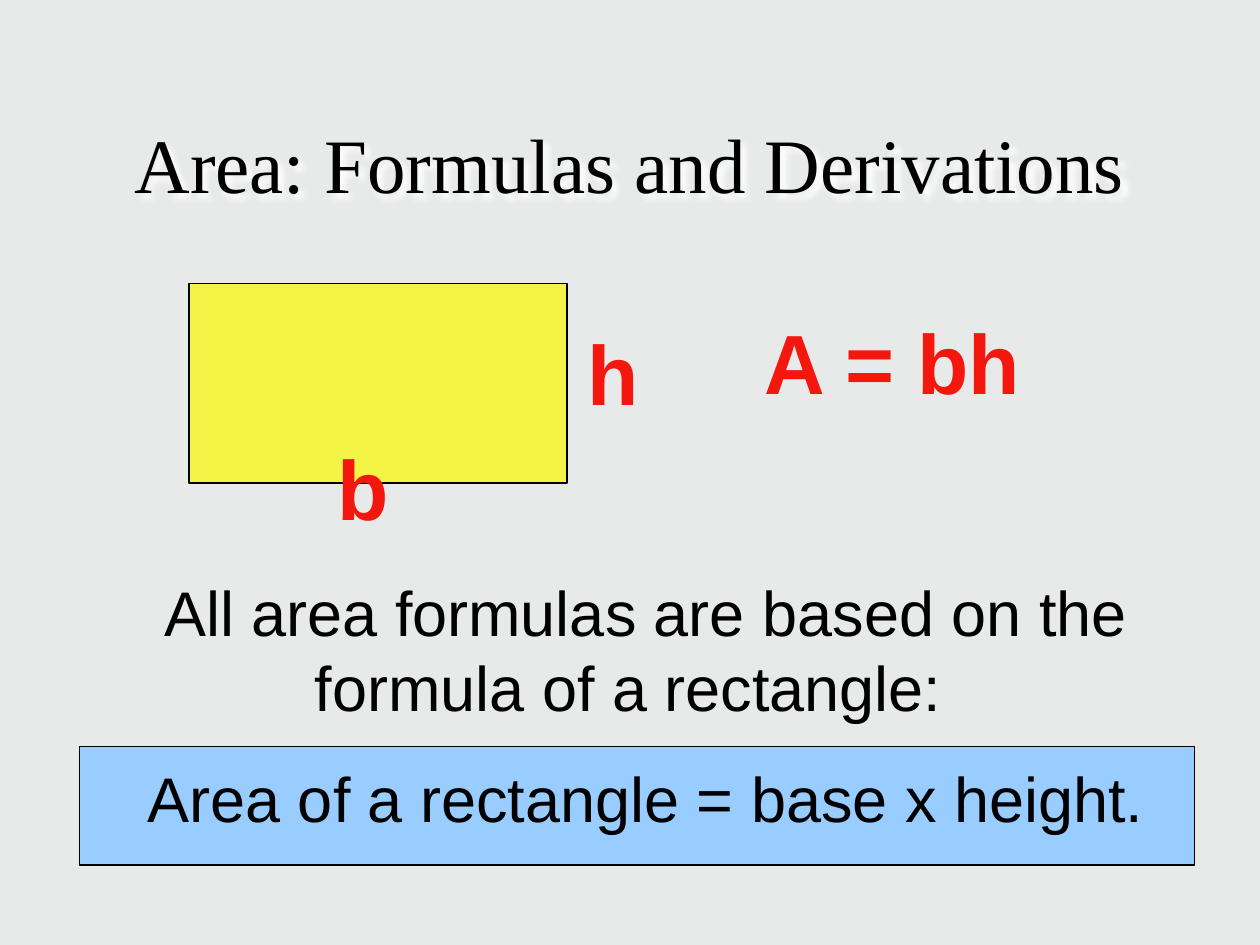
"""Build the slide on the area formula of a rectangle."""
from dataclasses import dataclass

from lxml import etree
from pptx import Presentation
from pptx.dml.color import RGBColor
from pptx.enum.shapes import MSO_SHAPE
from pptx.enum.text import MSO_ANCHOR, PP_ALIGN
from pptx.oxml.ns import qn
from pptx.util import Pt

RECT = MSO_SHAPE.RECTANGLE
TOP, MIDDLE = MSO_ANCHOR.TOP, MSO_ANCHOR.MIDDLE
LEFT, CENTER = PP_ALIGN.LEFT, PP_ALIGN.CENTER
BLANK = 6


@dataclass(frozen=True)
class Theme:
    background: str = "E8EAE9"
    ink: str = "000000"
    accent: str = "F4170E"
    figure: str = "F4F446"
    banner: str = "99CCFF"
    glow: str = "FFFFFF"
    title_font: str = "Times New Roman"
    body_font: str = "Arial"
    title_size: int = 44
    body_size: int = 36
    label_size: int = 48


THEME = Theme()


def rgb(value):
    return RGBColor.from_string(value)


def add_rect(s, box, fill):
    sp = s.shapes.add_shape(RECT, *map(Pt, box))
    sp.shadow.inherit = False
    sp.fill.solid()
    sp.fill.fore_color.rgb = rgb(fill)
    sp.line.color.rgb = rgb(THEME.ink)
    sp.line.width = Pt(0.75)


def add_text(s, box, text, *, size=THEME.body_size, font=THEME.body_font,
             color=THEME.ink, bold=False, align=CENTER, anchor=TOP,
             wrap=True, indent=0, gap=0):
    sp = s.shapes.add_textbox(*map(Pt, box))
    tf = sp.text_frame
    tf.word_wrap = wrap
    tf.vertical_anchor = anchor
    for i, line in enumerate(text.split("\n")):
        p = tf.add_paragraph() if i else tf.paragraphs[0]
        p.alignment = align
        if i:
            p.space_before = Pt(gap)
        if indent:
            p._p.get_or_add_pPr().set("indent", str(Pt(indent)))
        r = p.add_run()
        r.text = line
        r.font.name = font
        r.font.size = Pt(size)
        r.font.bold = bold
        r.font.color.rgb = rgb(color)
    return sp


def add_label(s, box, text, **fmt):
    add_text(s, box, text, size=THEME.label_size, color=THEME.accent,
             bold=True, **fmt)


def add_glow(sp, color):
    effects = etree.SubElement(sp._element.spPr, qn("a:effectLst"))
    shadow = etree.SubElement(effects, qn("a:outerShdw"), blurRad=str(Pt(3)),
                              dist=str(Pt(3)), dir="2700000")
    etree.SubElement(shadow, qn("a:srgbClr"), val=color)


def main():
    prs = Presentation()
    prs.slide_width, prs.slide_height = Pt(720), Pt(540)
    s = prs.slides.add_slide(prs.slide_layouts[BLANK])
    s.background.fill.solid()
    s.background.fill.fore_color.rgb = rgb(THEME.background)

    title = add_text(s, (54, 48, 612, 90), "Area: Formulas and Derivations",
                     size=THEME.title_size, font=THEME.title_font, anchor=MIDDLE)
    add_glow(title, THEME.glow)
    add_rect(s, (108, 162, 216, 114), THEME.figure)
    add_rect(s, (45.4, 426.6, 637.2, 67.8), THEME.banner)
    add_text(s, (56, 324, 606, 158.4),
             "All area formulas are based on the formula of a rectangle:\n"
             "Area of a rectangle = base x height.", indent=20, gap=20)
    add_label(s, (378, 174, 264, 64.8), "A = bh")
    add_label(s, (186, 246, 44, 64.8), "b", align=LEFT, wrap=False)
    add_label(s, (328.5, 180, 44, 64.8), "h", align=LEFT, wrap=False)
    prs.save("out.pptx")


if __name__ == "__main__":
    main()
